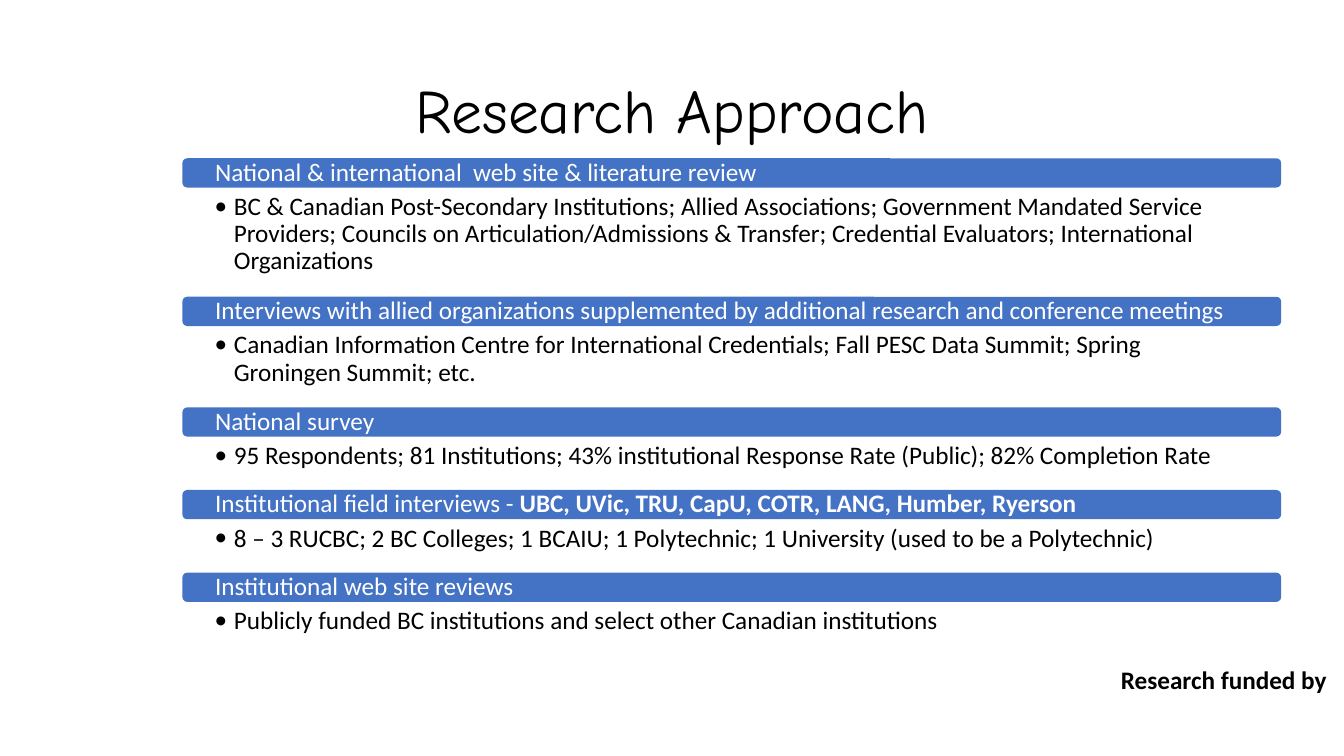
from lxml.etree import SubElement
from pptx import Presentation
from pptx.dml.color import RGBColor
from pptx.enum.shapes import MSO_SHAPE
from pptx.enum.text import MSO_ANCHOR, MSO_AUTO_SIZE, PP_ALIGN
from pptx.oxml.ns import qn
from pptx.util import Inches, Pt

WHITE = RGBColor(0xFF, 0xFF, 0xFF)
BLACK = RGBColor(0x00, 0x00, 0x00)
BLUE = RGBColor(0x44, 0x72, 0xC4)

COLUMNS, ROWS = 133.33, 75
FIRST_ROW, LINE_ROWS, PADDING_ROWS, GAP_ROWS = 17.2, 2.77, 3.43, 2
HEADING_RISE = 1.5

SECTIONS = [
    ("National & international  web site & literature review", "",
     "BC & Canadian Post-Secondary Institutions; Allied Associations; "
     "Government Mandated Service Providers; Councils on "
     "Articulation/Admissions & Transfer; Credential Evaluators; "
     "International Organizations", 3),
    ("Interviews with allied organizations supplemented by additional "
     "research and conference meetings", "",
     "Canadian Information Centre for International Credentials; "
     "Fall PESC Data Summit; Spring Groningen Summit; etc.", 2),
    ("National survey", "",
     "95 Respondents; 81 Institutions; 43% institutional Response Rate "
     "(Public); 82% Completion Rate", 1),
    ("Institutional field interviews - ",
     "UBC, UVic, TRU, CapU, COTR, LANG, Humber, Ryerson",
     "8 – 3 RUCBC; 2 BC Colleges; 1 BCAIU; 1 Polytechnic; "
     "1 University (used to be a Polytechnic)", 1),
    ("Institutional web site reviews", "",
     "Publicly funded BC institutions and select other Canadian institutions", 1),
]


class SlideBuilder:
    body_font = "Calibri"
    title_font = "Comic Neue"
    body_size = Pt(18)
    title_size = Pt(44)
    line_spacing = 0.9

    def __init__(self, presentation):
        self.column = presentation.slide_width / COLUMNS
        self.row = presentation.slide_height / ROWS
        self.slide = presentation.slides.add_slide(presentation.slide_layouts[5])

    def place(self, left, top, width, height):
        return (round(left * self.column), round(top * self.row),
                round(width * self.column), round(height * self.row))

    def style(self, paragraph, color, alignment=PP_ALIGN.LEFT):
        paragraph.alignment = alignment
        paragraph.line_spacing = self.line_spacing
        paragraph.font.name = self.body_font
        paragraph.font.size = self.body_size
        paragraph.font.color.rgb = color

    def panel(self, preset, area, fill, margins, anchor):
        shape = self.slide.shapes.add_shape(preset, *self.place(*area))
        shape.shadow.inherit = False
        shape.fill.solid()
        shape.fill.fore_color.rgb = fill
        shape.line.fill.background()
        frame = shape.text_frame
        frame.word_wrap = True
        frame.vertical_anchor = anchor
        side, top, bottom = margins
        frame.margin_left = frame.margin_right = round(side * self.column)
        frame.margin_top = round(top * self.row)
        frame.margin_bottom = round(bottom * self.row)
        return frame.paragraphs[0]

    def title(self, text, area):
        title = self.slide.shapes.title
        title.left, title.top, title.width, title.height = self.place(*area)
        frame = title.text_frame
        frame.text = text
        frame.word_wrap = True
        frame.auto_size = MSO_AUTO_SIZE.NONE
        frame.vertical_anchor = MSO_ANCHOR.MIDDLE
        paragraph = frame.paragraphs[0]
        self.style(paragraph, BLACK, PP_ALIGN.CENTER)
        paragraph.font.name = self.title_font
        paragraph.font.size = self.title_size

    def heading(self, text, bold_text, top):
        paragraph = self.panel(MSO_SHAPE.ROUNDED_RECTANGLE, (18.1, top, 109, 2.9),
                               BLUE, (3.1, 0, 0), MSO_ANCHOR.MIDDLE)
        paragraph.add_run().text = text
        if bold_text:
            run = paragraph.add_run()
            run.text = bold_text
            run.font.bold = True
        self.style(paragraph, WHITE)

    def detail(self, text, top, height):
        paragraph = self.panel(MSO_SHAPE.RECTANGLE, (12.2, top, 117.4, height),
                               WHITE, (9.1, 2, 1.4), MSO_ANCHOR.TOP)
        paragraph.text = text
        properties = paragraph._p.get_or_add_pPr()
        indent = round(1.9 * self.column)
        properties.set("marL", str(indent))
        properties.set("indent", str(-indent))
        SubElement(properties, qn("a:buFont")).set("typeface", self.body_font)
        SubElement(properties, qn("a:buChar")).set("char", "•")
        self.style(paragraph, BLACK)

    def credit(self, text, area):
        frame = self.slide.shapes.add_textbox(*self.place(*area)).text_frame
        frame.word_wrap = True
        paragraph = frame.paragraphs[0]
        paragraph.text = text
        self.style(paragraph, BLACK, PP_ALIGN.RIGHT)
        paragraph.line_spacing = 1.0
        paragraph.font.bold = True


def main():
    presentation = Presentation()
    presentation.slide_width = Inches(13.33)
    presentation.slide_height = Inches(7.5)
    builder = SlideBuilder(presentation)
    builder.title("Research Approach", (9.2, 4, 115, 14.5))
    builder.credit("Research funded by", (102.6, 65.4, 30, 4))
    top = FIRST_ROW
    for heading, bold_text, detail, lines in SECTIONS:
        height = PADDING_ROWS + lines * LINE_ROWS
        builder.detail(detail, top, height)
        builder.heading(heading, bold_text, top - HEADING_RISE)
        top += height + GAP_ROWS
    presentation.save("out.pptx")


if __name__ == "__main__":
    main()
